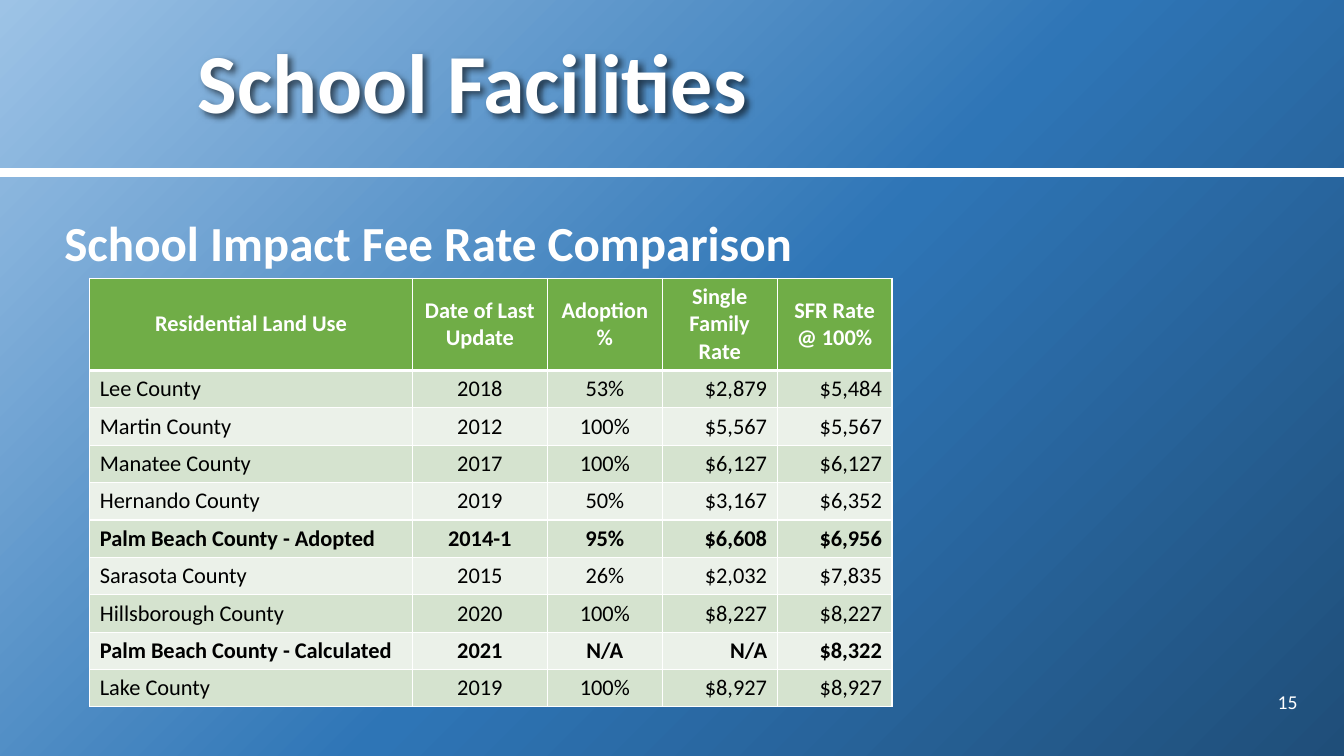
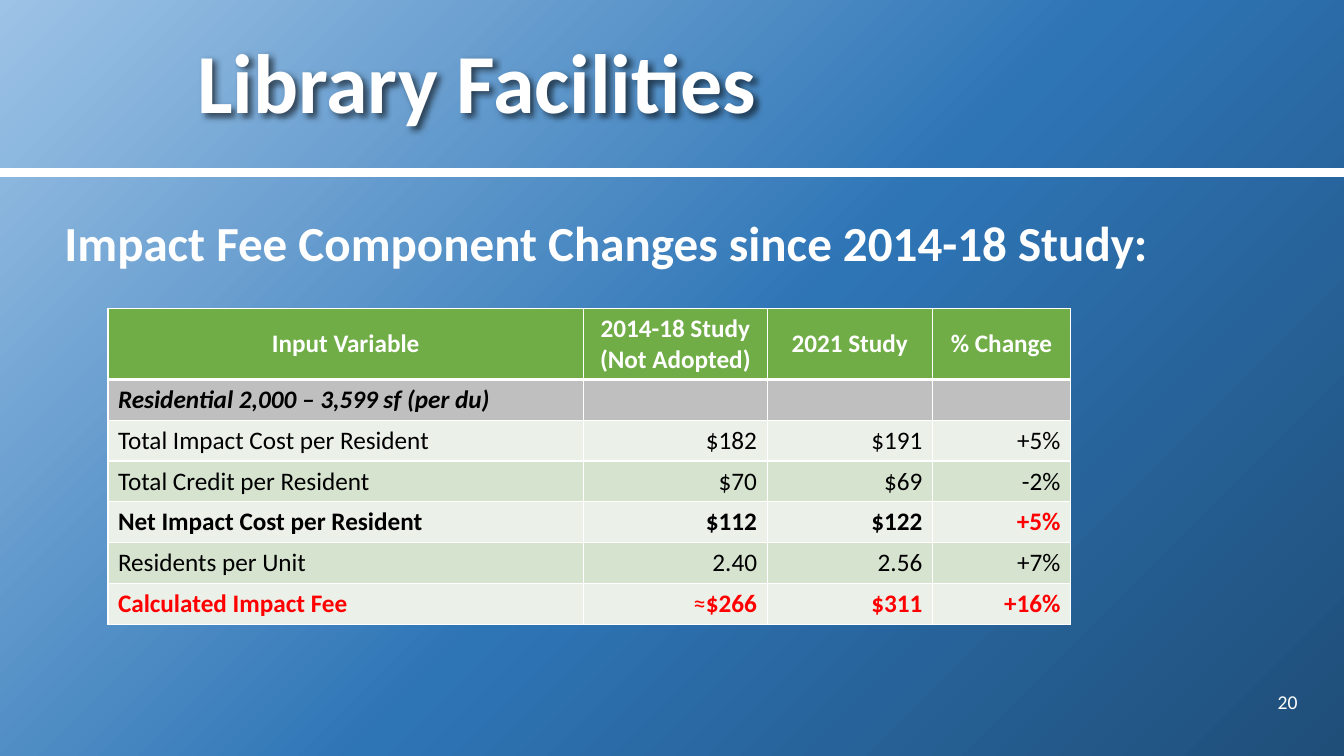
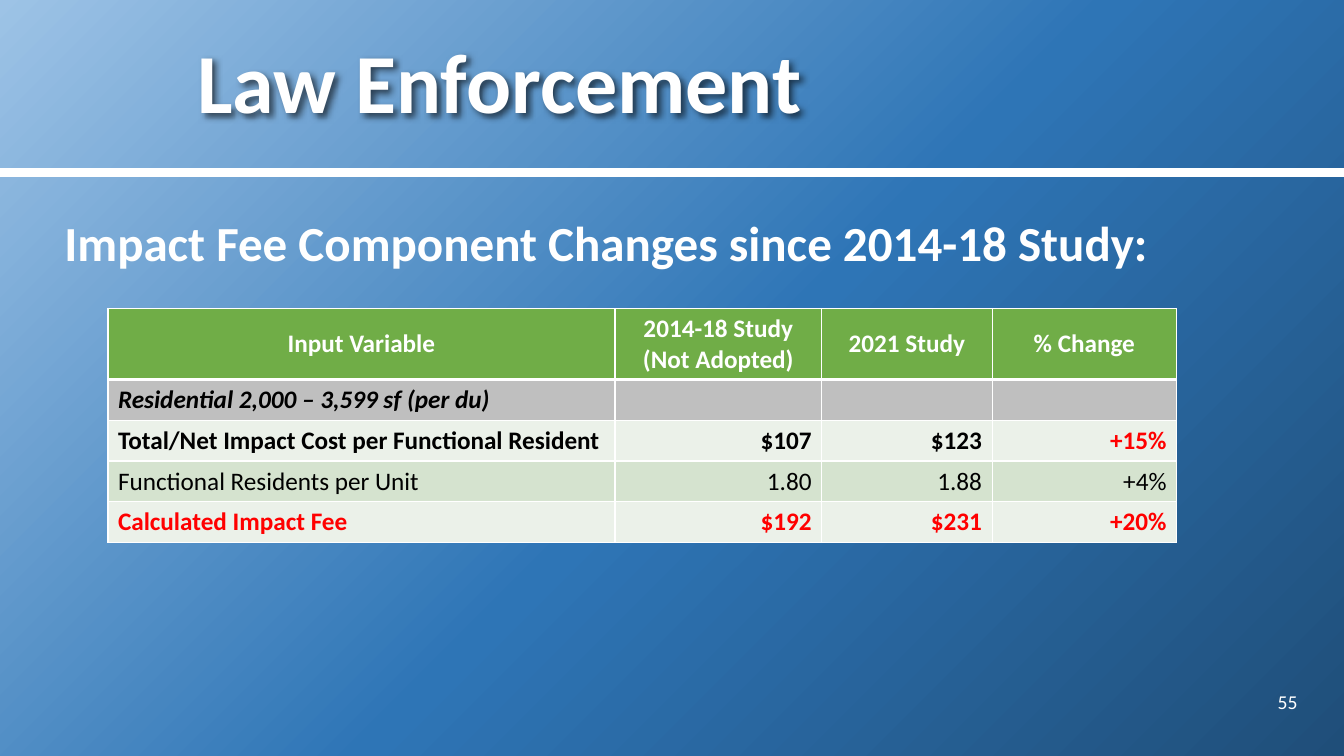
"""Build three impact fee slides that share a gradient, title band and table style."""
from copy import deepcopy
from dataclasses import dataclass
from enum import Enum
from typing import NamedTuple

from lxml.etree import SubElement
from pptx import Presentation
from pptx.dml.color import RGBColor
from pptx.enum.shapes import MSO_CONNECTOR
from pptx.enum.text import MSO_ANCHOR, PP_ALIGN as Align
from pptx.oxml.ns import qn
from pptx.util import Inches, Length, Pt

WIDTH, HEIGHT = Inches(13.33), Inches(7.5)
FONT = "Calibri"
WHITE, BLACK, RED = "FFFFFF", "000000", "FF0000"
HEADER_GREEN, SECTION_GRAY = "70AD47", "BFBFBF"
BANDS = ("EBF1E9", "D5E3CF")
GRADIENT = ((0, "9DC3E6"), (0.53, "2E75B6"), (1, "1F4E79"))
BAND_EDGE = 22.8
APPROXIMATE = "≈"


class Frame(NamedTuple):
    """A box in percent of the slide's width and height."""
    left: float
    top: float
    width: float
    height: float


class TextStyle(NamedTuple):
    size: float
    color: str = WHITE
    bold: bool = False
    italic: bool = False


class RowKind(Enum):
    HEADER = "header"
    PLAIN = "plain"
    STRONG = "strong"
    CHANGED = "changed"
    RESULT = "result"
    SECTION = "section"


class Row(NamedTuple):
    cells: tuple[str, ...]
    kind: RowKind = RowKind.PLAIN


@dataclass(frozen=True)
class TableSpec:
    left: float
    top: float
    columns: tuple[float, ...]
    header_height: float
    row_height: float
    size: float
    alignments: tuple[Align, ...]
    rows: tuple[Row, ...]


@dataclass(frozen=True)
class SlideSpec:
    title: str
    heading: str
    number: int
    table: TableSpec


TITLE_FRAME = Frame(13.95, 0, 83.25, BAND_EDGE)
HEADING_FRAME = Frame(4.05, 25.87, 93.15, 70.27)
NUMBER_FRAME = Frame(90.6, 90.13, 6.68, 5.33)

COMPARISON_ROWS = (
    Row(("Residential Land Use", "Date of Last Update", "Adoption %",
         "Single Family Rate", "SFR Rate @ 100%"), RowKind.HEADER),
    Row(("Lee County", "2018", "53%", "$2,879", "$5,484")),
    Row(("Martin County", "2012", "100%", "$5,567", "$5,567")),
    Row(("Manatee County", "2017", "100%", "$6,127", "$6,127")),
    Row(("Hernando County", "2019", "50%", "$3,167", "$6,352")),
    Row(("Palm Beach County - Adopted", "2014-1", "95%", "$6,608", "$6,956"), RowKind.STRONG),
    Row(("Sarasota County", "2015", "26%", "$2,032", "$7,835")),
    Row(("Hillsborough County", "2020", "100%", "$8,227", "$8,227")),
    Row(("Palm Beach County - Calculated", "2021", "N/A", "N/A", "$8,322"), RowKind.STRONG),
    Row(("Lake County", "2019", "100%", "$8,927", "$8,927")),
)
COMPONENT_HEAD = (
    Row(("Input Variable", "2014-18 Study (Not Adopted)", "2021 Study", "% Change"),
        RowKind.HEADER),
    Row(("Residential 2,000 – 3,599 sf (per du)", "", "", ""), RowKind.SECTION),
)
LIBRARY_ROWS = (
    Row(("Total Impact Cost per Resident", "$182", "$191", "+5%")),
    Row(("Total Credit per Resident", "$70", "$69", "-2%")),
    Row(("Net Impact Cost per Resident", "$112", "$122", "+5%"), RowKind.CHANGED),
    Row(("Residents per Unit", "2.40", "2.56", "+7%")),
    Row(("Calculated Impact Fee", "≈$266", "$311", "+16%"), RowKind.RESULT),
)
LAW_ROWS = (
    Row(("Total/Net Impact Cost per Functional Resident", "$107", "$123", "+15%"),
        RowKind.CHANGED),
    Row(("Functional Residents per Unit", "1.80", "1.88", "+4%")),
    Row(("Calculated Impact Fee", "$192", "$231", "+20%"), RowKind.RESULT),
)


def component_slide(title: str, number: int, columns: tuple[float, ...],
                    rows: tuple[Row, ...]) -> SlideSpec:
    table = TableSpec(8.03, 40.8, columns, 9.4, 5.4, 18,
                      (Align.LEFT,) + (Align.RIGHT,) * 3, COMPONENT_HEAD + rows)
    return SlideSpec(title, "Impact Fee Component Changes since 2014-18 Study:", number, table)


SLIDES = (
    SlideSpec("School Facilities", "School Impact Fee Rate Comparison", 15,
              TableSpec(6.68, 36.8, (24, 10.05, 8.55, 8.55, 8.55), 12.2, 4.95, 16,
                        (Align.LEFT,) + (Align.CENTER,) * 2 + (Align.RIGHT,) * 2,
                        COMPARISON_ROWS)),
    component_slide("Library Facilities", 20, (35.4, 13.65, 12.3, 10.28), LIBRARY_ROWS),
    component_slide("Law Enforcement", 55, (37.73, 15.38, 12.68, 13.73), LAW_ROWS),
)


def across(percent: float) -> Length:
    return Length(round(WIDTH * percent / 100))


def down(percent: float) -> Length:
    return Length(round(HEIGHT * percent / 100))


def rgb(color: str) -> RGBColor:
    return RGBColor.from_string(color)


def style_run(run, style: TextStyle) -> None:
    font = run.font
    font.name, font.size = FONT, Pt(style.size)
    font.bold, font.italic = style.bold, style.italic
    font.color.rgb = rgb(style.color)


def paint_background(master) -> None:
    fill = master.background.fill
    fill.gradient()
    fill.gradient_angle = 315
    stop_list = next(master.element.iter(qn("a:gsLst")))
    stop_list.append(deepcopy(stop_list[0]))
    master_fill = master.background.fill
    for stop, (position, color) in zip(master_fill.gradient_stops, GRADIENT):
        stop.position = position
        stop.color.rgb = rgb(color)


def add_text(slide, frame: Frame, text: str, style: TextStyle, anchor=MSO_ANCHOR.MIDDLE,
             alignment=Align.LEFT, line_spacing: float = 1.0):
    shape = slide.shapes.add_textbox(across(frame.left), down(frame.top),
                                     across(frame.width), down(frame.height))
    text_frame = shape.text_frame
    text_frame.word_wrap = True
    text_frame.vertical_anchor = anchor
    text_frame.text = text
    paragraph = text_frame.paragraphs[0]
    paragraph.alignment = alignment
    paragraph.line_spacing = line_spacing
    style_run(paragraph.runs[0], style)
    return shape


def add_shadow(shape) -> None:
    effects = SubElement(shape.element.spPr, qn("a:effectLst"))
    shadow = SubElement(effects, qn("a:outerShdw"), blurRad="50800", dist="38100",
                        dir="2700000", algn="tl", rotWithShape="0")
    color = SubElement(shadow, qn("a:srgbClr"), val=BLACK)
    SubElement(color, qn("a:alpha"), val="60000")


def add_rule(slide) -> None:
    rule = slide.shapes.add_connector(MSO_CONNECTOR.STRAIGHT, 0, down(BAND_EDGE),
                                      WIDTH, down(BAND_EDGE))
    rule.line.color.rgb = rgb(WHITE)
    rule.line.width = Pt(6)
    SubElement(rule.element.spPr, qn("a:effectLst"))


def set_borders(cell, top: float, bottom: float) -> None:
    properties = cell._tc.get_or_add_tcPr()
    for side, points in (("L", 1), ("R", 1), ("T", top), ("B", bottom)):
        line = SubElement(properties, qn(f"a:ln{side}"), w=str(Pt(points)))
        SubElement(SubElement(line, qn("a:solidFill")), qn("a:srgbClr"), val=WHITE)


def cell_style(kind: RowKind, size: float, is_last: bool) -> TextStyle:
    if kind is RowKind.HEADER:
        color = WHITE
    elif kind is RowKind.RESULT or (kind is RowKind.CHANGED and is_last):
        color = RED
    else:
        color = BLACK
    return TextStyle(size, color, kind is not RowKind.PLAIN, kind is RowKind.SECTION)


def row_fill(kind: RowKind, index: int) -> str:
    special = {RowKind.HEADER: HEADER_GREEN, RowKind.SECTION: SECTION_GRAY}
    return special.get(kind, BANDS[index % 2])


def fill_cell(cell, text: str, style: TextStyle, alignment: Align) -> None:
    cell.vertical_anchor = MSO_ANCHOR.MIDDLE
    paragraph = cell.text_frame.paragraphs[0]
    paragraph.alignment = alignment
    if text.startswith(APPROXIMATE):
        paragraph.text = APPROXIMATE
        style_run(paragraph.runs[0], style._replace(bold=False))
        text = text.removeprefix(APPROXIMATE)
    if text:
        run = paragraph.add_run()
        run.text = text
        style_run(run, style)
    else:
        paragraph.font.size = Pt(style.size)


def add_table(slide, spec: TableSpec) -> None:
    heights = [spec.header_height] + [spec.row_height] * (len(spec.rows) - 1)
    table = slide.shapes.add_table(len(spec.rows), len(spec.columns), across(spec.left),
                                   down(spec.top), across(sum(spec.columns)),
                                   down(sum(heights))).table
    table.horz_banding = False
    for column, width in zip(table.columns, spec.columns):
        column.width = across(width)
    for index, (row, height) in enumerate(zip(spec.rows, heights)):
        table.rows[index].height = down(height)
        is_header = row.kind is RowKind.HEADER
        for position, text in enumerate(row.cells):
            cell = table.cell(index, position)
            set_borders(cell, top=3 if index == 1 else 1, bottom=3 if is_header else 1)
            cell.fill.solid()
            cell.fill.fore_color.rgb = rgb(row_fill(row.kind, index))
            style = cell_style(row.kind, spec.size, position == len(row.cells) - 1)
            alignment = Align.CENTER if is_header else spec.alignments[position]
            fill_cell(cell, text, style, alignment)


def build_slide(presentation, spec: SlideSpec) -> None:
    slide = presentation.slides.add_slide(presentation.slide_layouts[6])
    add_rule(slide)
    title = add_text(slide, TITLE_FRAME, spec.title, TextStyle(60, bold=True), line_spacing=0.9)
    add_shadow(title)
    add_text(slide, NUMBER_FRAME, str(spec.number), TextStyle(14), alignment=Align.RIGHT)
    add_text(slide, HEADING_FRAME, spec.heading, TextStyle(35, bold=True),
             anchor=MSO_ANCHOR.TOP, line_spacing=1.2)
    add_table(slide, spec.table)


def main() -> None:
    presentation = Presentation()
    presentation.slide_width, presentation.slide_height = WIDTH, HEIGHT
    paint_background(presentation.slide_master)
    for spec in SLIDES:
        build_slide(presentation, spec)
    presentation.save("out.pptx")


if __name__ == "__main__":
    main()
